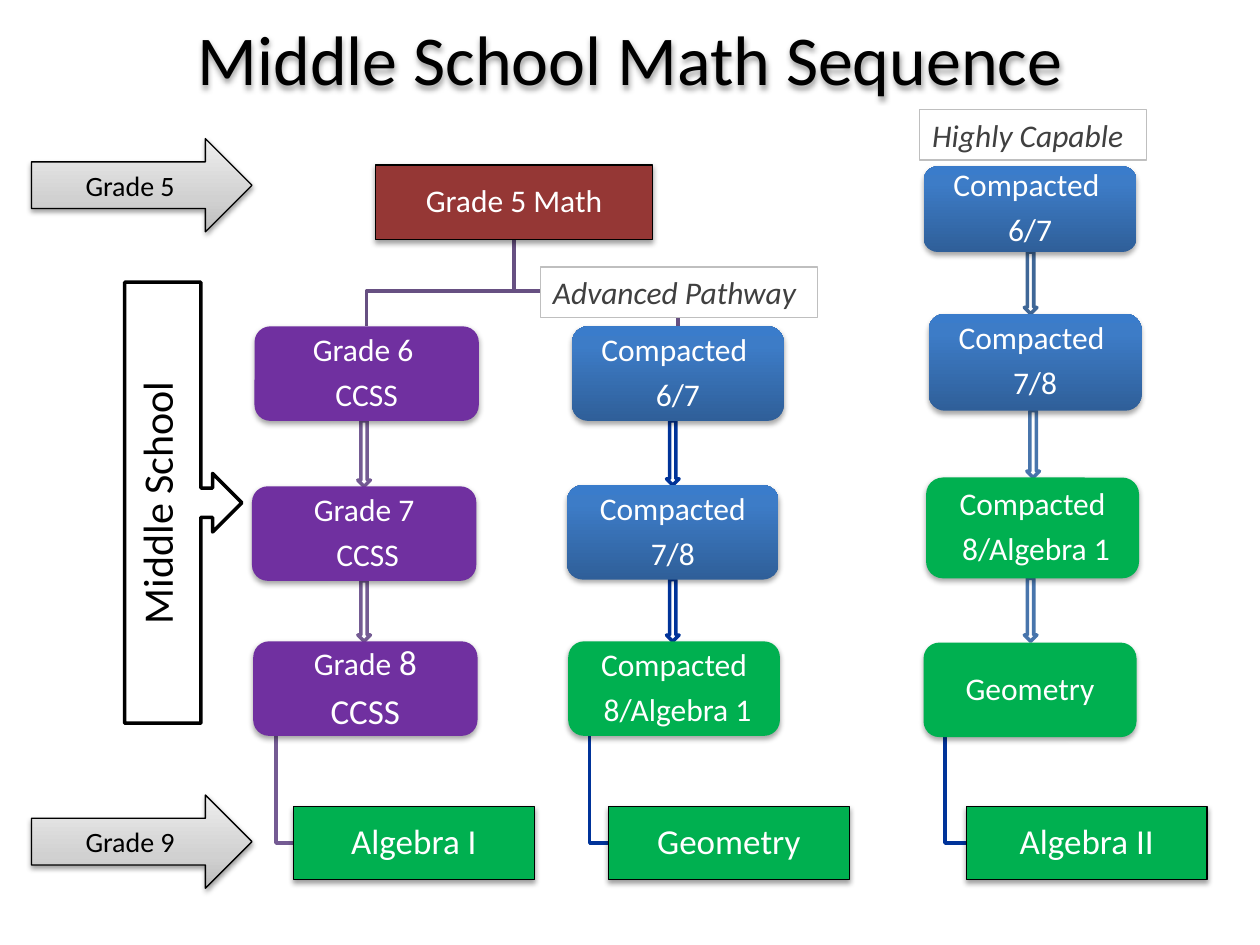
from copy import deepcopy

from lxml import etree
from pptx import Presentation
from pptx.dml.color import RGBColor
from pptx.enum.shapes import MSO_SHAPE
from pptx.enum.text import MSO_ANCHOR, PP_ALIGN
from pptx.oxml.ns import qn
from pptx.util import Emu, Pt

PX = 9144
RECTANGLE = MSO_SHAPE.RECTANGLE
ROUNDED = MSO_SHAPE.ROUNDED_RECTANGLE
DOWN_ARROW = MSO_SHAPE.DOWN_ARROW
RIGHT_ARROW = MSO_SHAPE.RIGHT_ARROW
CALLOUT = MSO_SHAPE.RIGHT_ARROW_CALLOUT
CENTER, LEFT = PP_ALIGN.CENTER, PP_ALIGN.LEFT
MIDDLE, TOP = MSO_ANCHOR.MIDDLE, MSO_ANCHOR.TOP

FONT = "Calibri"
BLACK = RGBColor(0x00, 0x00, 0x00)
WHITE = RGBColor(0xFF, 0xFF, 0xFF)
RED = RGBColor(0x95, 0x37, 0x35)
PURPLE = RGBColor(0x70, 0x30, 0xA0)
GREEN = RGBColor(0x00, 0xB0, 0x50)
NAVY = RGBColor(0x00, 0x33, 0x99)
VIOLET = RGBColor(0x74, 0x5B, 0x93)
DARK_VIOLET = RGBColor(0x67, 0x50, 0x82)
STEEL = RGBColor(0x48, 0x75, 0xAC)
DARK_STEEL = RGBColor(0x3F, 0x67, 0x97)
LABEL_TEXT = RGBColor(0x40, 0x40, 0x40)
LABEL_LINE = RGBColor(0xBF, 0xBF, 0xBF)
BLUE_GRADIENT = (
    (0, RGBColor(0x2F, 0x5F, 0x99)),
    (0.8, RGBColor(0x3D, 0x7C, 0xC7)),
    (1, RGBColor(0x3A, 0x7C, 0xCB)),
)
GRAY_GRADIENT = (
    (0, RGBColor(0xBD, 0xBD, 0xBD)),
    (0.35, RGBColor(0xD1, 0xD1, 0xD1)),
    (1, RGBColor(0xEE, 0xEE, 0xEE)),
)

ELBOWS = [
    (DARK_VIOLET, [(408, 190), (408, 231), (538, 231), (538, 259)]),
    (DARK_VIOLET, [(408, 190), (408, 231), (291, 231), (291, 259)]),
    (VIOLET, [(219, 584), (219, 669), (233, 669)]),
    (NAVY, [(468, 584), (468, 669), (483, 669)]),
    (NAVY, [(750, 584), (750, 669), (767, 669)]),
]
DOWN_ARROWS = [
    (284, 334, 52, VIOLET), (284, 461, 48, VIOLET),
    (529, 334, 51, NAVY), (529, 460, 49, NAVY),
    (813, 200, 49, DARK_STEEL), (815, 326, 53, STEEL), (813, 459, 50, STEEL),
]
COURSES = [
    (202, 259, 178, 75, PURPLE, ["Grade 6 ", "CCSS"]),
    (200, 386, 178, 75, PURPLE, ["Grade 7", " CCSS"]),
    (454, 259, 168, 75, BLUE_GRADIENT, ["Compacted ", "6/7"]),
    (450, 385, 168, 75, BLUE_GRADIENT, ["Compacted", "7/8"]),
    (451, 509, 168, 75, GREEN, ["Compacted", " 8/Algebra 1"]),
    (733, 132, 169, 68, BLUE_GRADIENT, ["Compacted ", "6/7"]),
    (737, 249, 169, 77, BLUE_GRADIENT, ["Compacted ", "7/8"]),
    (735, 379, 169, 80, GREEN, ["Compacted", " 8/Algebra 1"]),
    (733, 510, 169, 75, GREEN, ["Geometry"]),
]
GRADE_9_COURSES = [(233, "Algebra I"), (483, "Geometry"), (767, "Algebra II")]


def apply_fill(shape, fill):
    """Fill with a solid colour, an upward gradient, or nothing."""
    if fill is None:
        shape.fill.background()
    elif isinstance(fill, RGBColor):
        shape.fill.solid()
        shape.fill.fore_color.rgb = fill
    else:
        shape.fill.gradient()
        shape.fill.gradient_angle = 90
        stop_list = shape._element.spPr.find(qn("a:gradFill")).find(qn("a:gsLst"))
        stop_list.insert(1, deepcopy(stop_list[0]))
        for stop, (position, color) in zip(shape.fill.gradient_stops, fill):
            stop.position = position
            stop.color.rgb = color


def apply_line(shape, color, width):
    """Outline the shape, or remove its outline when there is no colour."""
    if color is None:
        shape.line.fill.background()
    else:
        shape.line.color.rgb = color
        shape.line.width = Pt(width)


def add_shadow(shape, opacity):
    """Give the shape a soft black shadow that falls straight down."""
    shape.shadow.inherit = False
    effects = shape._element.spPr.find(qn("a:effectLst"))
    shadow = etree.SubElement(
        effects, qn("a:outerShdw"), blurRad=str(Pt(3.1)), dist=str(Pt(1.7)),
        dir="5400000", rotWithShape="0")
    color = etree.SubElement(shadow, qn("a:srgbClr"), val="000000")
    etree.SubElement(color, qn("a:alpha"), val=str(opacity * 1000))


def add_block(slide, kind, box, fill=None, line=None, width=0.75, opacity=0):
    """Add a preset shape with its fill, outline and optional shadow."""
    shape = slide.shapes.add_shape(kind, *(Emu(length * PX) for length in box))
    apply_fill(shape, fill)
    apply_line(shape, line, width)
    shape.shadow.inherit = False
    if opacity:
        add_shadow(shape, opacity)
    return shape


def write_text(shape, lines, size, color, align=CENTER, anchor=TOP, italic=False):
    """Write one paragraph per line and return the paragraphs."""
    frame = shape.text_frame
    frame.word_wrap = True
    frame.vertical_anchor = anchor
    frame.text = "\n".join(lines)
    for paragraph in frame.paragraphs:
        paragraph.alignment = align
        paragraph.font.name = FONT
        paragraph.font.size = Pt(size)
        paragraph.font.italic = italic
        paragraph.font.color.rgb = color
    return frame.paragraphs


def write_course(shape, lines, size):
    """Write centred white course text with tight margins and spacing."""
    frame = shape.text_frame
    frame.margin_left = frame.margin_right = PX
    frame.margin_top = frame.margin_bottom = PX
    paragraphs = write_text(shape, lines, size, WHITE, anchor=MIDDLE)
    for paragraph in paragraphs:
        paragraph.line_spacing = 0.9
        paragraph.space_after = Pt(size * 0.35)
    return paragraphs


def add_course(slide, box, fill, lines):
    """Add a rounded middle school course."""
    shape = add_block(slide, ROUNDED, box, fill, opacity=35)
    return write_course(shape, lines, 18)


def add_end_course(slide, box, fill, name, size):
    """Add a square-cornered course that starts or ends the sequence."""
    shape = add_block(slide, RECTANGLE, box, fill, BLACK, opacity=38)
    write_course(shape, [name], size)


def add_elbow(slide, color, points):
    """Draw an open bent line through the points."""
    builder = slide.shapes.build_freeform(*points[0], scale=PX)
    builder.add_line_segments(points[1:], close=False)
    elbow = builder.convert_to_shape()
    apply_fill(elbow, None)
    apply_line(elbow, color, 2)
    elbow.shadow.inherit = False


def add_label(slide, box, text, fill=None):
    """Add an italic pathway label."""
    shape = add_block(slide, RECTANGLE, box, fill, LABEL_LINE)
    write_text(shape, [text], 18, LABEL_TEXT, LEFT, italic=True)


def add_title(slide, text):
    """Place and format the title."""
    title = slide.shapes.title
    title.left, title.top, title.width, title.height = (
        Emu(length * PX) for length in (50, 17, 900, 58))
    write_text(title, [text], 40, BLACK, anchor=MIDDLE)
    add_shadow(title, 40)


def main():
    """Build the slide and save it."""
    presentation = Presentation()
    presentation.slide_width, presentation.slide_height = Emu(1000 * PX), Emu(750 * PX)
    slide = presentation.slides.add_slide(presentation.slide_layouts[5])
    add_title(slide, "Middle School Math Sequence")

    for color, points in ELBOWS:
        add_elbow(slide, color, points)
    for left, top, height, color in DOWN_ARROWS:
        add_block(slide, DOWN_ARROW, (left, top, 10, height), line=color, width=2)

    add_end_course(slide, (298, 131, 220, 59), RED, "Grade 5 Math", 18)
    for *box, fill, lines in COURSES:
        add_course(slide, box, fill, lines)
    grade, standard = add_course(slide, (201, 509, 178, 75), PURPLE, ["Grade", "CCSS"])
    number = grade.add_run()
    number.text = " 8"
    number.font.size = standard.font.size = Pt(20)
    for left, name in GRADE_9_COURSES:
        add_end_course(slide, (left, 640, 191, 58), GREEN, name, 20)

    callout = add_block(slide, CALLOUT, (99, 224, 93, 350), WHITE, BLACK, 2)
    write_text(callout, ["Middle School"], 24, BLACK)
    callout.text_frame._txBody.bodyPr.set("vert", "vert270")
    for top, name in ((110, "Grade 5"), (631, "Grade 9")):
        arrow = add_block(slide, RIGHT_ARROW, (25, top, 175, 74), GRAY_GRADIENT, BLACK, opacity=38)
        write_text(arrow, [name], 16, BLACK)
    add_label(slide, (730, 87, 180, 40), "Highly Capable")
    add_label(slide, (429, 212, 220, 40), "Advanced Pathway", WHITE)
    presentation.save("out.pptx")


if __name__ == "__main__":
    main()
